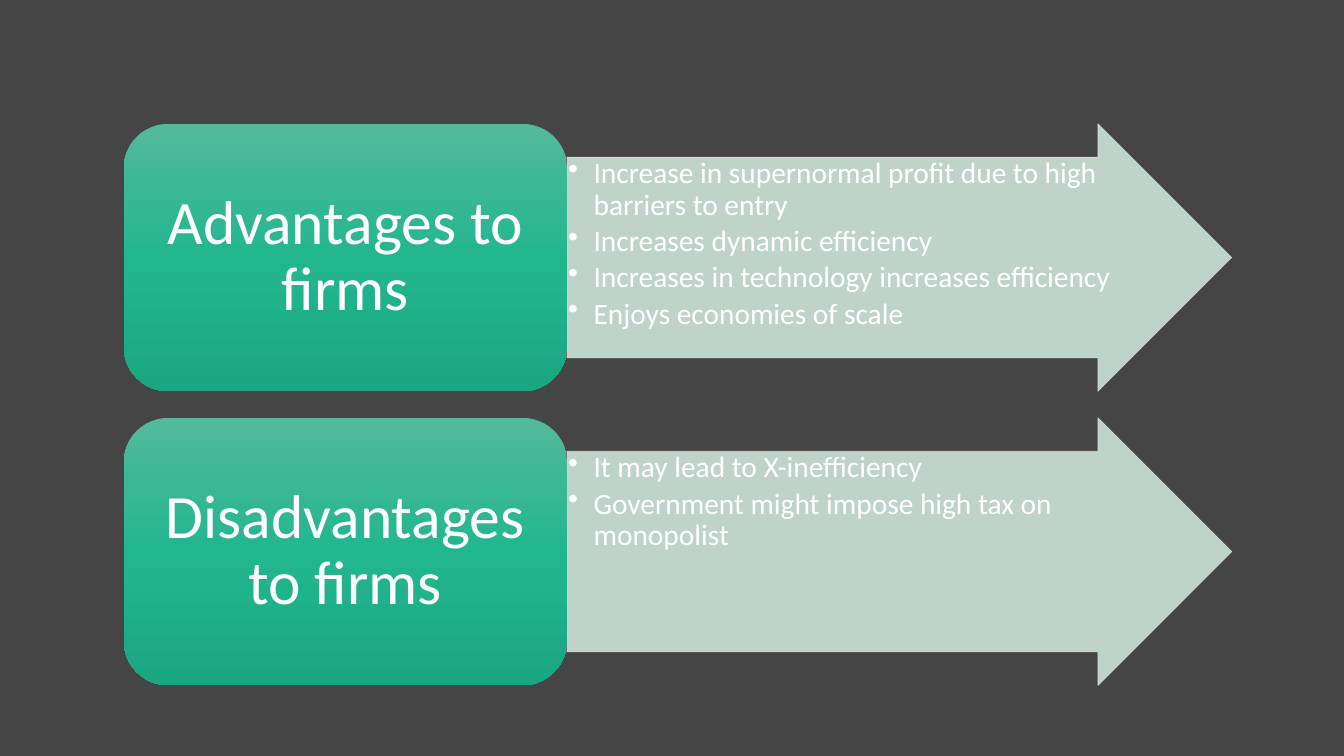
from copy import deepcopy
from dataclasses import dataclass

from lxml.etree import SubElement
from pptx import Presentation
from pptx.dml.color import RGBColor
from pptx.enum.shapes import MSO_SHAPE as Preset
from pptx.enum.text import MSO_ANCHOR as Anchor, PP_ALIGN as Align
from pptx.oxml.ns import qn
from pptx.shapes.autoshape import Shape
from pptx.slide import Slide
from pptx.text.text import _Paragraph as Paragraph
from pptx.util import Cm, Pt


@dataclass(frozen=True)
class Theme:
    background: RGBColor = RGBColor(0x45, 0x45, 0x45)
    arrow: RGBColor = RGBColor(0xCD, 0xE3, 0xDA)
    arrow_alpha: int = 90
    text: RGBColor = RGBColor(0xFF, 0xFF, 0xFF)
    card: tuple[tuple[float, RGBColor], ...] = (
        (0.0, RGBColor(0x52, 0xBA, 0x9A)),
        (0.5, RGBColor(0x22, 0xB6, 0x8F)),
        (1.0, RGBColor(0x19, 0xA7, 0x82)),
    )
    font: str = "Calibri"
    heading_size: int = 44
    point_size: int = 21


@dataclass(frozen=True)
class Effect:
    heading: str
    points: tuple[str, ...]


THEME = Theme()
LEFT, TOP = 3.12, 3.12
CARD_WIDTH, ARROW_WIDTH, ROW_HEIGHT = 11.17, 16.75, 6.74
ROW_PITCH = 7.41
EFFECTS = (
    Effect("Advantages to firms", (
        "Increase in supernormal profit due to high barriers to entry",
        "Increases dynamic efficiency",
        "Increases in technology increases efficiency",
        "Enjoys economies of scale",
    )),
    Effect("Disadvantages to firms", (
        "It may lead to X-inefficiency",
        "Government might impose high tax on monopolist",
    )),
)


def add_block(slide: Slide, preset: Preset, left: float, top: float, width: float) -> Shape:
    block = slide.shapes.add_shape(preset, Cm(left), Cm(top), Cm(width), Cm(ROW_HEIGHT))
    block.shadow.inherit = False
    block.text_frame.word_wrap = True
    return block


def set_margins(block: Shape, across: float, down: float) -> None:
    frame = block.text_frame
    frame.margin_left = frame.margin_right = Cm(across)
    frame.margin_top = frame.margin_bottom = Cm(down)


def style_text(paragraph: Paragraph, size: int) -> None:
    paragraph.line_spacing = 0.9
    paragraph.font.name = THEME.font
    paragraph.font.size = Pt(size)
    paragraph.font.color.rgb = THEME.text


def add_bullet(paragraph: Paragraph) -> None:
    paragraph.level = 1
    paragraph.space_after = Pt(3.2)
    properties = paragraph._p.get_or_add_pPr()
    properties.set("marL", str(Cm(0.64)))
    properties.set("indent", str(Cm(-0.64)))
    SubElement(properties, qn("a:buChar")).set("char", "•")


def add_arrow(slide: Slide, top: float, points: tuple[str, ...]) -> None:
    arrow = add_block(slide, Preset.RIGHT_ARROW, LEFT + CARD_WIDTH, top, ARROW_WIDTH)
    arrow.adjustments[0] = 0.75
    arrow.adjustments[1] = 0.5
    arrow.fill.solid()
    arrow.fill.fore_color.rgb = THEME.arrow
    arrow.line.color.rgb = THEME.arrow
    arrow.line.width = Pt(0.5)
    for colour in arrow._element.spPr.iter(qn("a:srgbClr")):
        SubElement(colour, qn("a:alpha")).set("val", str(THEME.arrow_alpha * 1000))
    set_margins(arrow, 0.03, 0.03)
    arrow.text_frame.vertical_anchor = Anchor.TOP
    arrow.text_frame.text = "\n".join(points)
    for paragraph in arrow.text_frame.paragraphs:
        paragraph.alignment = Align.LEFT
        paragraph.line_spacing = 0.9
        add_bullet(paragraph)
        style_text(paragraph, THEME.point_size)


def add_card(slide: Slide, top: float, heading: str) -> None:
    card = add_block(slide, Preset.ROUNDED_RECTANGLE, LEFT, top, CARD_WIDTH)
    card.line.fill.background()
    card.fill.gradient()
    card.fill.gradient_angle = 270
    stop_list = card._element.spPr.find(f".//{qn('a:gsLst')}")
    stop_list.append(deepcopy(stop_list[-1]))
    for stop, (position, colour) in zip(card.fill.gradient_stops, THEME.card):
        stop.position = position
        stop.color.rgb = colour
    set_margins(card, 0.46, 0.23)
    card.text_frame.vertical_anchor = Anchor.MIDDLE
    card.text_frame.text = heading
    paragraph = card.text_frame.paragraphs[0]
    paragraph.alignment = Align.CENTER
    style_text(paragraph, THEME.heading_size)


def main() -> None:
    deck = Presentation()
    deck.slide_width, deck.slide_height = Cm(33.87), Cm(19.05)
    slide = deck.slides.add_slide(deck.slide_layouts.get_by_name("Blank"))
    slide.background.fill.solid()
    slide.background.fill.fore_color.rgb = THEME.background
    for row, effect in enumerate(EFFECTS):
        top = TOP + row * ROW_PITCH
        add_arrow(slide, top, effect.points)
        add_card(slide, top, effect.heading)
    deck.save("out.pptx")


if __name__ == "__main__":
    main()
